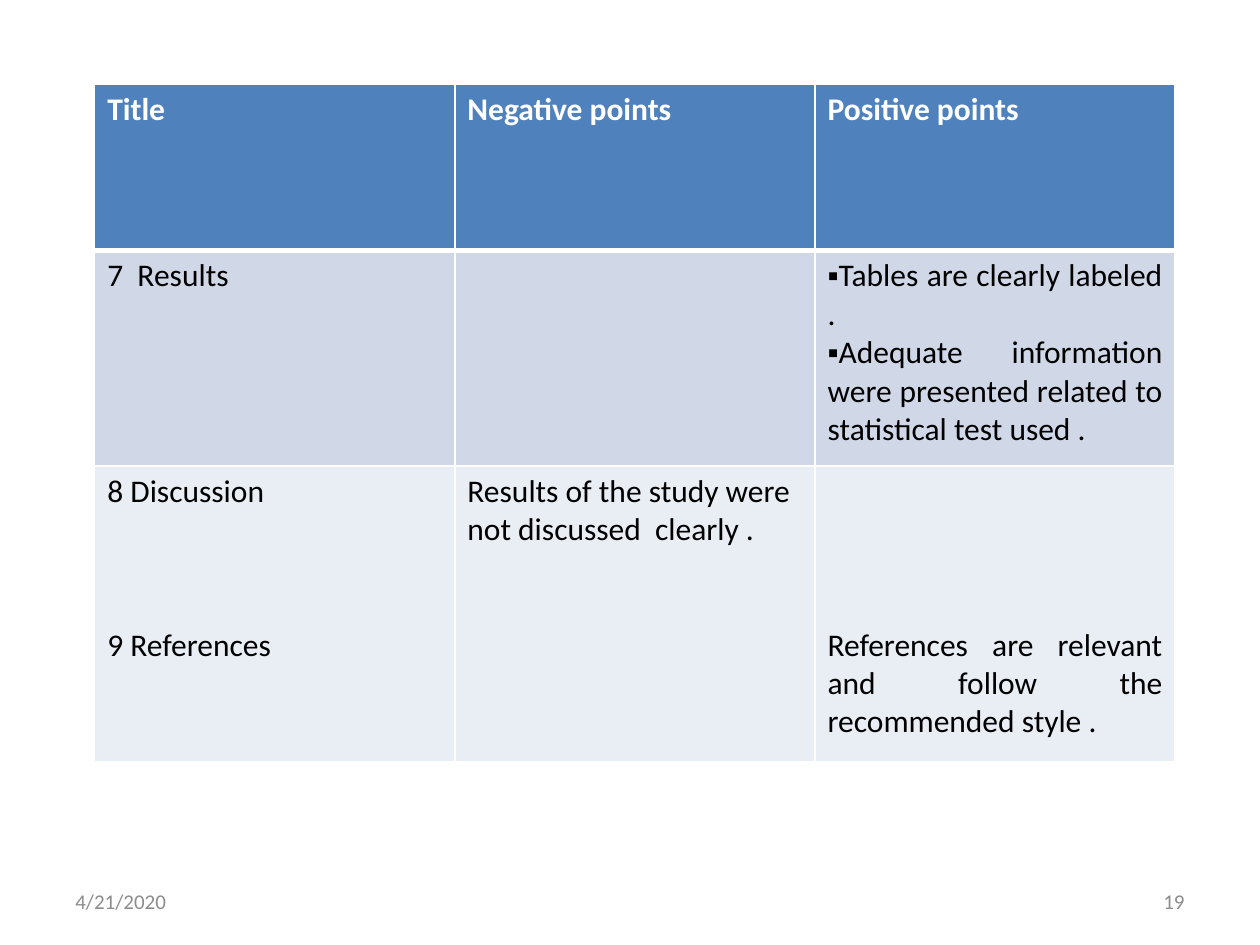
from dataclasses import dataclass

from lxml.etree import SubElement
from pptx import Presentation
from pptx.dml.color import RGBColor
from pptx.enum.text import MSO_ANCHOR, PP_ALIGN
from pptx.oxml.ns import qn
from pptx.util import Cm, Pt


@dataclass(frozen=True)
class Theme:
    font: str = "Calibri"
    body_size: int = 18
    footer_size: int = 12
    white: str = "FFFFFF"
    black: str = "000000"
    grey: str = "8C8C8C"
    header_fill: str = "4F81BD"
    row_fills: tuple = ("D0D8E8", "E9EDF4")
    thin_line: int = 1
    thick_line: int = 3


def write_text(para, text, size, color, font, bold=False, align=None, bullet=None, before=0):
    para.alignment = align
    para.space_before = Pt(before)
    if bullet:
        properties = para._p.get_or_add_pPr()
        properties.set("marL", "0")
        properties.set("indent", "0")
        SubElement(properties, qn("a:buFont")).set("typeface", "Arial")
        SubElement(properties, qn("a:buChar")).set("char", bullet)
    span = para.add_run()
    span.text = text
    span.font.name = font
    span.font.size = Pt(size)
    span.font.bold = bold
    span.font.color.rgb = RGBColor.from_string(color)


class SlideBuilder:
    def __init__(self, page, theme):
        self.page = page
        self.theme = theme

    def table(self, left, top, column_width, row_heights, column_count):
        frame = self.page.shapes.add_table(
            len(row_heights), column_count, Cm(left), Cm(top),
            Cm(column_width * column_count), Cm(sum(row_heights)))
        grid = frame.table
        for column in grid.columns:
            column.width = Cm(column_width)
        for row, height in zip(grid.rows, row_heights):
            row.height = Cm(height)
        for row_index, row in enumerate(grid.rows):
            for cell in row.cells:
                self.style_cell(cell, row_index)
        return grid

    def style_cell(self, cell, row_index):
        theme = self.theme
        thin, thick = theme.thin_line, theme.thick_line
        widths = {
            "lnL": thin,
            "lnR": thin,
            "lnT": thick if row_index == 1 else thin,
            "lnB": thick if row_index == 0 else thin,
        }
        properties = cell._tc.get_or_add_tcPr()
        for side, width in widths.items():
            line = SubElement(properties, qn(f"a:{side}"), w=str(Pt(width)))
            fill = SubElement(line, qn("a:solidFill"))
            SubElement(fill, qn("a:srgbClr"), val=theme.white)
        cell.fill.solid()
        color = (theme.header_fill, *theme.row_fills)[row_index]
        cell.fill.fore_color.rgb = RGBColor.from_string(color)

    def cell_text(self, cell, lines, color=None, gap=0, **style):
        frame = cell.text_frame
        for index, line in enumerate(lines):
            para = frame.add_paragraph() if index else frame.paragraphs[0]
            write_text(para, line, self.theme.body_size, color or self.theme.black,
                       self.theme.font, before=gap if index else 0, **style)

    def footer(self, text, left, align):
        box = self.page.shapes.add_textbox(Cm(left), Cm(17.65), Cm(5.92), Cm(1.02))
        frame = box.text_frame
        frame.word_wrap = True
        frame.vertical_anchor = MSO_ANCHOR.MIDDLE
        write_text(frame.paragraphs[0], text, self.theme.footer_size,
                   self.theme.grey, self.theme.font, align=align)


def main():
    deck = Presentation()
    deck.slide_width, deck.slide_height = Cm(25.4), Cm(19.05)
    theme = Theme()
    builder = SlideBuilder(deck.slides.add_slide(deck.slide_layouts[6]), theme)

    review = builder.table(1.91, 1.7, 7.26, (3.35, 4.34, 5.97), 3)
    for column, heading in enumerate(("Title", "Negative points", "Positive points")):
        builder.cell_text(review.cell(0, column), [heading], color=theme.white, bold=True)

    builder.cell_text(review.cell(1, 0), ["7  Results"])
    builder.cell_text(review.cell(1, 2), [
        "Tables are clearly labeled .",
        "Adequate information were presented related to statistical test used .",
    ], align=PP_ALIGN.JUSTIFY, bullet="▪")

    builder.cell_text(review.cell(2, 0), ["8 Discussion", "9 References"], gap=66)
    builder.cell_text(review.cell(2, 1),
                      ["Results of the study were not discussed  clearly ."])
    references = review.cell(2, 2)
    references.margin_top = Cm(3.23)
    builder.cell_text(references,
                      ["References are relevant and follow the recommended style ."],
                      align=PP_ALIGN.JUSTIFY)

    builder.footer("4/21/2020", 1.27, PP_ALIGN.LEFT)
    builder.footer("19", 18.21, PP_ALIGN.RIGHT)
    deck.save("out.pptx")


if __name__ == "__main__":
    main()
